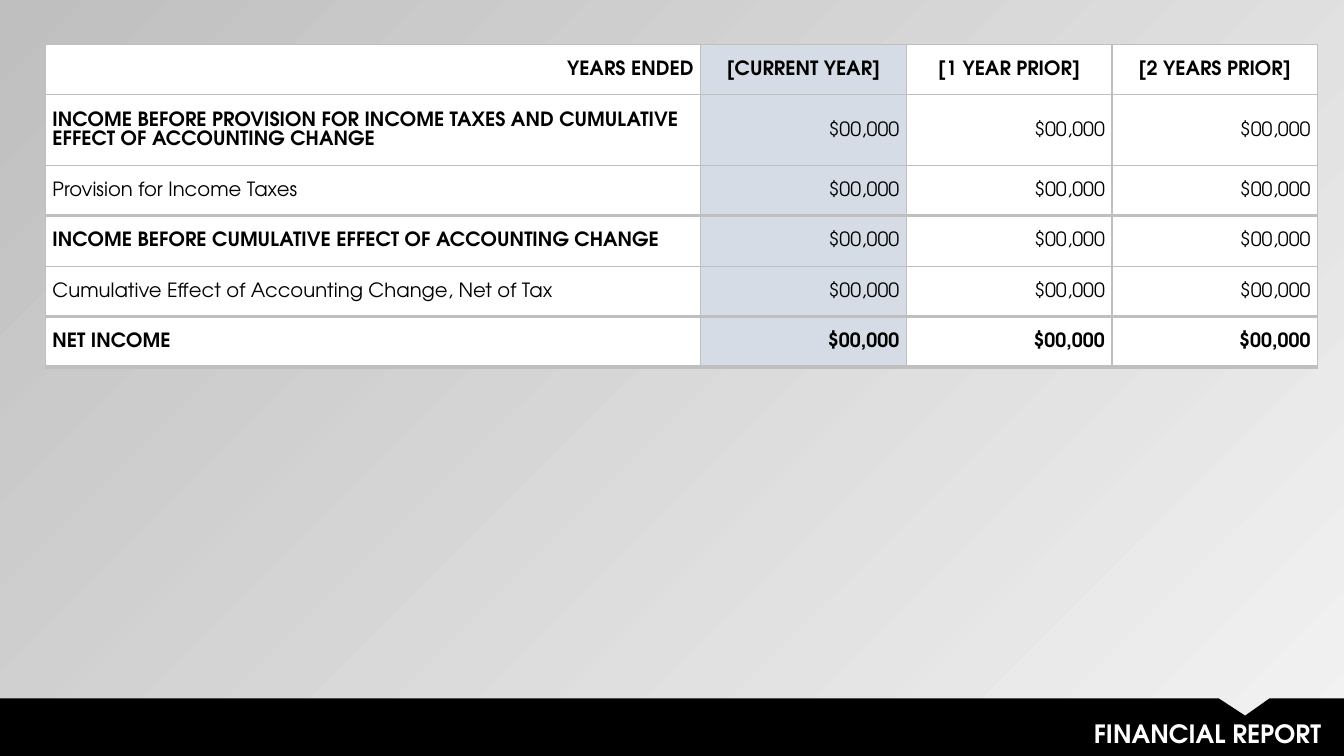
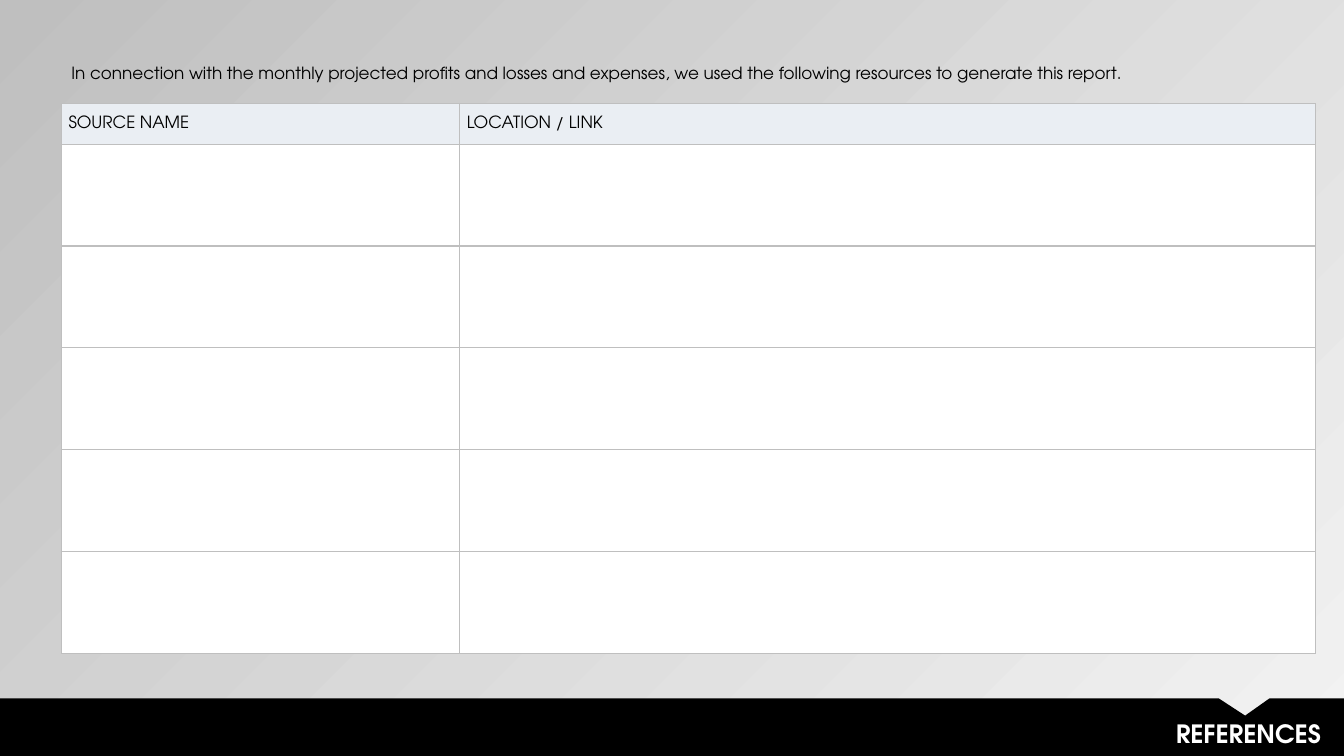
from lxml import etree
from pptx import Presentation
from pptx import util as u
from pptx.dml.color import RGBColor
from pptx.enum import text as t
from pptx.oxml import ns

BLACK = RGBColor(0x00, 0x00, 0x00)
WHITE = RGBColor(0xFF, 0xFF, 0xFF)
PALE = RGBColor(0xF2, 0xF2, 0xF2)
GRAY = RGBColor(0xBF, 0xBF, 0xBF)
BLUE = RGBColor(0xD6, 0xDC, 0xE5)
MIST = RGBColor(0xEA, 0xEE, 0xF3)
FONT = "TeX Gyre Adventor"
WIDE, HIGH = 13.33, 7.5
LEFT, MID, RIGHT = t.PP_ALIGN.LEFT, t.PP_ALIGN.CENTER, t.PP_ALIGN.RIGHT
HEADS = ["YEARS ENDED", "[CURRENT YEAR]", "[1 YEAR PRIOR]", "[2 YEARS PRIOR]"]
SUM = "$00,000"
ITEMS = [
    ("INCOME BEFORE PROVISION FOR INCOME TAXES AND CUMULATIVE EFFECT OF ACCOUNTING CHANGE", True, False),
    ("Provision for Income Taxes", False, False),
    ("INCOME BEFORE CUMULATIVE EFFECT OF ACCOUNTING CHANGE", True, False),
    ("Cumulative Effect of Accounting Change, Net of Tax", False, False),
    ("NET INCOME", True, True),
]
RULES = [1, 1, 1, 2.25, 1, 2.25, 3]
NOTE = ("In connection with the monthly projected profits and losses and expenses, "
        "we used the following resources to generate this report.")


def write(frame, words, size, color=BLACK, bold=False, align=LEFT, space=None):
    """Write one run of styled text into a frame."""
    para = frame.paragraphs[0]
    para.alignment = align
    if space:
        para.line_spacing = space
    run = para.add_run()
    run.text = words
    font = run.font
    font.name, font.size, font.bold = FONT, u.Pt(size), bold
    font.color.rgb = color


def label(slide, box, words, size, **style):
    """Place a wrapped text box."""
    frame = slide.shapes.add_textbox(*map(u.Inches, box)).text_frame
    frame.word_wrap = True
    frame.auto_size = t.MSO_AUTO_SIZE.SHAPE_TO_FIT_TEXT
    write(frame, words, size, **style)


def edge(cell, top=1, base=1):
    """Draw the four borders of a cell."""
    props = cell._tc.get_or_add_tcPr()
    for side, width in zip("LRTB", (1, 1, top, base)):
        line = etree.SubElement(props, ns.qn("a:ln" + side), w=str(u.Pt(width)))
        fill = etree.SubElement(line, ns.qn("a:solidFill"))
        etree.SubElement(fill, ns.qn("a:srgbClr"), val=str(GRAY))


def grid(slide, left, top, cols, rows, rules, tint):
    """Place a ruled table whose fills come from tint(row, col)."""
    box = map(u.Inches, (left, top, sum(cols), sum(rows)))
    table = slide.shapes.add_table(len(rows), len(cols), *box).table
    table.first_row = table.horz_banding = False
    for col, width in zip(table.columns, cols):
        col.width = u.Inches(width)
    for r, high in enumerate(rows):
        table.rows[r].height = u.Inches(high)
        for c in range(len(cols)):
            cell = table.cell(r, c)
            edge(cell, rules[r], rules[r + 1])
            cell.fill.solid()
            cell.fill.fore_color.rgb = tint(r, c)
            cell.vertical_anchor = t.MSO_ANCHOR.MIDDLE
            cell.margin_left = cell.margin_right = u.Inches(0.07)
            cell.margin_top = cell.margin_bottom = 0
    return table


def band(slide, title, left=0, top=6.93, width=WIDE, high=0.57):
    """Draw the notched footer band with its title."""
    tip = left + 12.35
    end, base = left + width, top + high
    dots = [(tip - 0.26, top), (tip, top + 0.17), (tip + 0.24, top),
            (end, top), (end, base), (left, base)]
    path = slide.shapes.build_freeform(u.Inches(left), u.Inches(top))
    path.add_line_segments([(u.Inches(x), u.Inches(y)) for x, y in dots], close=True)
    shape = path.convert_to_shape()
    shape.shadow.inherit = False
    shape.fill.solid()
    shape.fill.fore_color.rgb = BLACK
    shape.line.fill.background()
    label(slide, (left + 4.14, top + 0.15, 9.06, 0.4), title, 18,
          color=WHITE, bold=True, align=RIGHT)


def page(deck, title):
    """Add a slide with the shared backdrop and footer."""
    slide = deck.slides.add_slide(deck.slide_layouts[6])
    fill = slide.background.fill
    fill.gradient()
    fill.gradient_angle = 135
    for stop, color in zip(fill.gradient_stops, (PALE, GRAY)):
        stop.color.rgb = color
    band(slide, title)
    return slide


def report(deck):
    """Build the financial report slide."""
    slide = page(deck, "FINANCIAL REPORT")
    table = grid(slide, 0.45, 0.44, [6.5] + [2.04] * 3, [0.5, 0.7] + [0.5] * 4,
                 RULES, lambda r, c: BLUE if c == 1 else WHITE)
    for c, head in enumerate(HEADS):
        write(table.cell(0, c).text_frame, head, 14, bold=True,
              align=MID if c else RIGHT, space=1.07)
    for r, (name, bold, total) in enumerate(ITEMS, 1):
        write(table.cell(r, 0).text_frame, name, 14, bold=bold, space=1.07)
        for c in range(1, len(HEADS)):
            write(table.cell(r, c).text_frame, SUM, 14, bold=total,
                  align=RIGHT, space=1.07)


def sources(deck):
    """Build the references slide."""
    slide = page(deck, "REFERENCES")
    table = grid(slide, 0.61, 1.03, [3.95, 8.49], [0.4] + [1.01] * 5,
                 [1] * 7, lambda r, c: WHITE if r else MIST)
    for c, head in enumerate(("SOURCE NAME", "LOCATION / LINK")):
        write(table.cell(0, c).text_frame, head, 12)
    label(slide, (0.61, 0.57, 12.45, 0.3), NOTE, 12)


def main():
    """Build and save the deck."""
    deck = Presentation()
    deck.slide_width, deck.slide_height = u.Inches(WIDE), u.Inches(HIGH)
    report(deck)
    sources(deck)
    deck.save("out.pptx")


if __name__ == "__main__":
    main()
